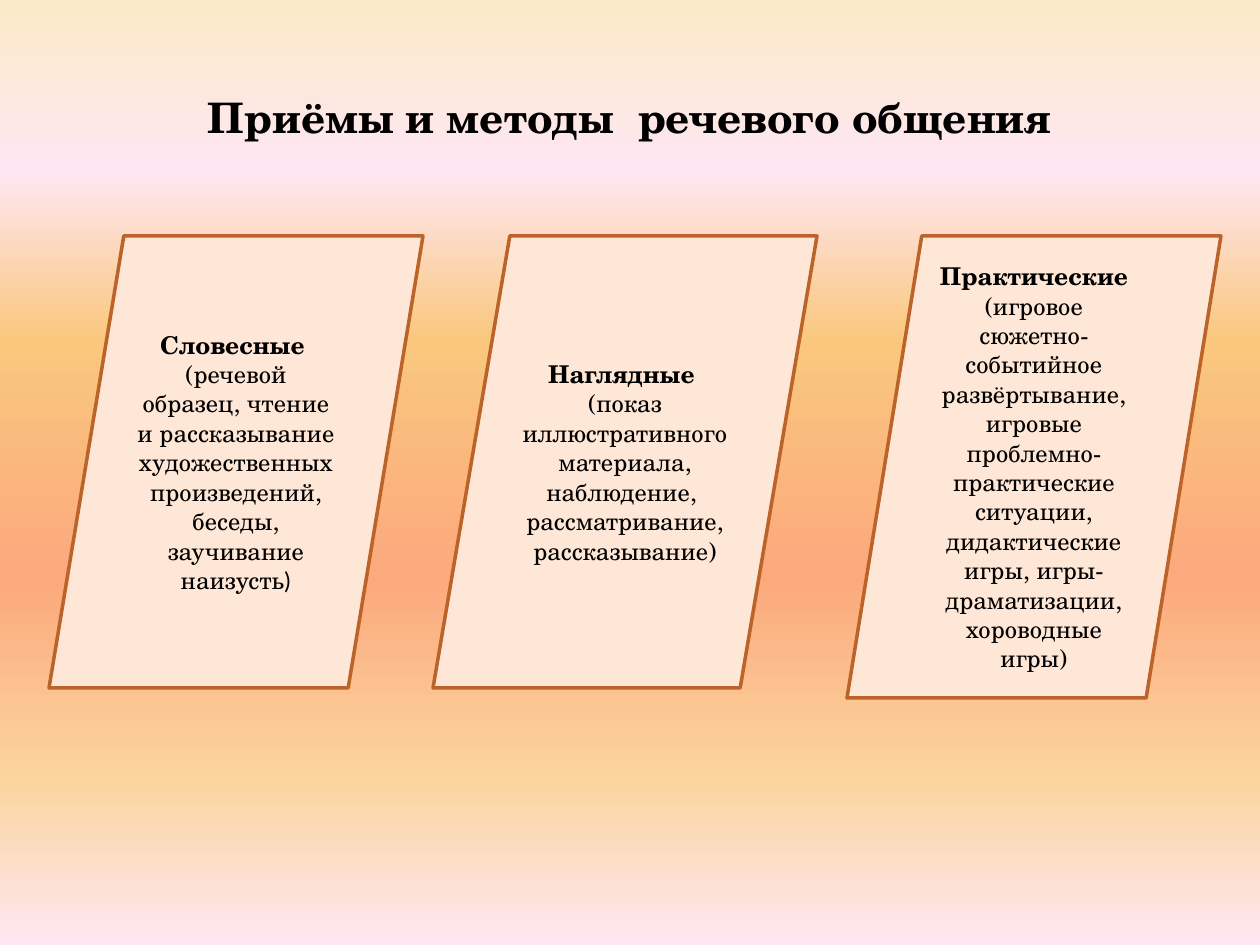
import dataclasses

import lxml.etree
import pptx
import pptx.dml.color
import pptx.enum.shapes
import pptx.enum.text
import pptx.oxml.ns
import pptx.util

PX = 914400 / 126


@dataclasses.dataclass(frozen=True)
class Theme:
    ink: str = "000000"
    card_fill: str = "FFE7D7"
    card_line: str = "BC6329"
    font: str = "TeX Gyre Schola"
    bracket_font: str = "Calibri"
    title_size: int = 24
    body_size: int = 14
    line_width: int = 2
    backdrop: tuple = (
        (0, "FBEAC7"), (18, "FEE7F2"), (36, "FAC77D"),
        (61, "FBA97D"), (82, "FBD49C"), (100, "FEE7F2"),
    )


THEME = Theme()

TITLE = "Приёмы и методы  речевого общения"
TITLE_BOX = (63, 38, 1134, 158)

CARD_TOP = 236
CARDS = [
    ((49, CARD_TOP, 374, 452), "Словесные ", [
        ("(речевой образец, чтение и рассказывание художественных "
         "произведений, беседы, заучивание наизусть", THEME.font),
        (")", THEME.bracket_font),
    ]),
    ((433, CARD_TOP, 384, 452), "Наглядные ", [
        ("(показ иллюстративного материала, наблюдение,  "
         "рассматривание, рассказывание)", THEME.font),
    ]),
    ((847, CARD_TOP, 374, 462), "Практические", [
        ("(игровое сюжетно-событийное развёртывание, игровые проблемно- "
         "практические ситуации, дидактические игры, игры-драматизации, "
         "хороводные игры)", THEME.font),
    ]),
]


def emu(box):
    return [pptx.util.Emu(round(length * PX)) for length in box]


def color(value):
    return pptx.dml.color.RGBColor.from_string(value)


def prepare_frame(shape):
    frame = shape.text_frame
    frame.word_wrap = True
    frame.vertical_anchor = pptx.enum.text.MSO_ANCHOR.MIDDLE
    return frame


def fill_paragraph(para, runs, size, bold):
    para.alignment = pptx.enum.text.PP_ALIGN.CENTER
    for text, font in runs:
        span = para.add_run()
        span.text = text
        span.font.name = font
        span.font.size = pptx.util.Pt(size)
        span.font.bold = bold
        span.font.color.rgb = color(THEME.ink)


def paint_backdrop(page):
    fill = page.background.fill
    fill.gradient()
    fill.gradient_angle = 270
    qn = pptx.oxml.ns.qn
    stops = next(page.element.iter(qn("a:gsLst")))
    for stop in list(stops):
        stops.remove(stop)
    for percent, value in THEME.backdrop:
        stop = lxml.etree.SubElement(stops, qn("a:gs"), pos=str(percent * 1000))
        lxml.etree.SubElement(stop, qn("a:srgbClr"), val=value)


def add_title(page, box):
    frame = prepare_frame(page.shapes.add_textbox(*emu(box)))
    fill_paragraph(frame.paragraphs[0], [(TITLE, THEME.font)], THEME.title_size, True)


def add_card(page, box, heading, details):
    card = page.shapes.add_shape(
        pptx.enum.shapes.MSO_SHAPE.FLOWCHART_DATA, *emu(box))
    card.shadow.inherit = False
    card.fill.solid()
    card.fill.fore_color.rgb = color(THEME.card_fill)
    card.line.color.rgb = color(THEME.card_line)
    card.line.width = pptx.util.Pt(THEME.line_width)
    frame = prepare_frame(card)
    fill_paragraph(frame.paragraphs[0], [(heading, THEME.font)], THEME.body_size, True)
    fill_paragraph(frame.add_paragraph(), details, THEME.body_size, False)


def main():
    deck = pptx.Presentation()
    deck.slide_width, deck.slide_height = emu((1260, 945))
    page = deck.slides.add_slide(deck.slide_layouts[6])
    paint_backdrop(page)
    add_title(page, TITLE_BOX)
    for box, heading, details in CARDS:
        add_card(page, box, heading, details)
    deck.save("out.pptx")


if __name__ == "__main__":
    main()
